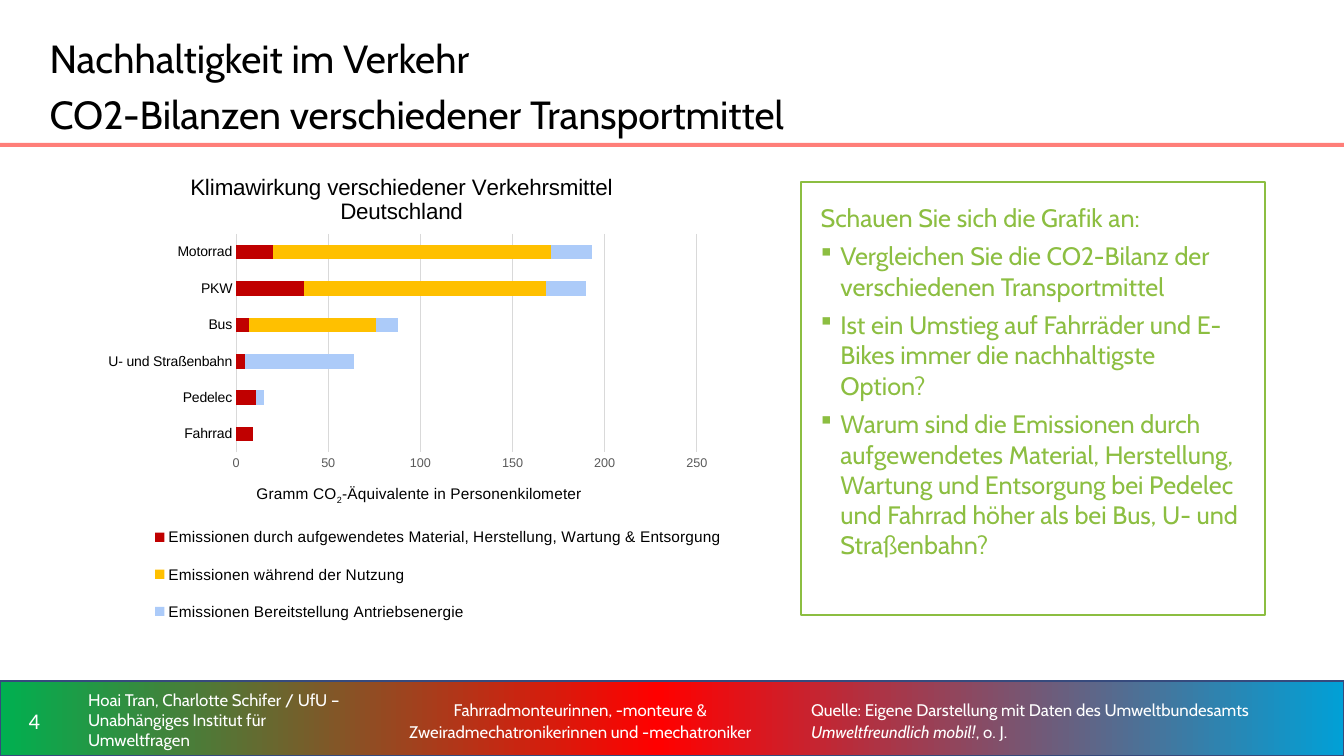
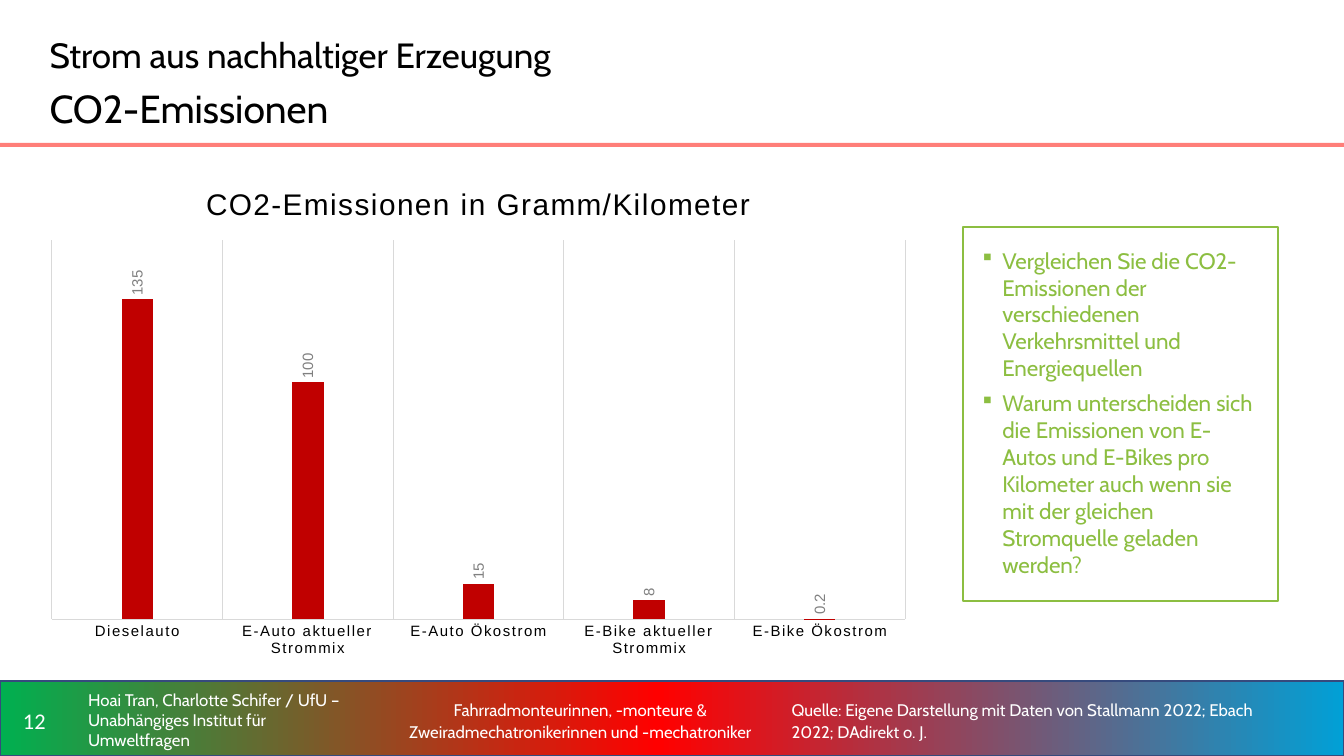
"""Build two slides on the CO2 balance of means of transport."""
from copy import deepcopy
from dataclasses import dataclass
from typing import NamedTuple

from lxml import etree
from pptx import Presentation
from pptx.chart.data import CategoryChartData
from pptx.dml.color import RGBColor
from pptx.enum.chart import XL_CHART_TYPE, XL_LABEL_POSITION, XL_LEGEND_POSITION, XL_TICK_MARK
from pptx.enum.shapes import MSO_SHAPE
from pptx.enum.text import MSO_ANCHOR, PP_ALIGN
from pptx.oxml.ns import qn
from pptx.util import Cm, Pt

STACKED = XL_CHART_TYPE.BAR_STACKED
COLUMNS = XL_CHART_TYPE.COLUMN_CLUSTERED
OUTSIDE = XL_LABEL_POSITION.OUTSIDE_END
BOTTOM = XL_LEGEND_POSITION.BOTTOM
NO_TICK = XL_TICK_MARK.NONE
RECT = MSO_SHAPE.RECTANGLE
TOP, MIDDLE = MSO_ANCHOR.TOP, MSO_ANCHOR.MIDDLE
LEFT, CENTER = PP_ALIGN.LEFT, PP_ALIGN.CENTER


@dataclass(frozen=True)
class Theme:
    black: str = "000000"
    white: str = "FFFFFF"
    green: str = "8CBE41"
    rule: str = "FF7E79"
    outline: str = "364A7D"
    grid: str = "D9D9D9"
    ticks: str = "595959"
    labels: str = "808080"
    red: str = "C00000"
    yellow: str = "FFC000"
    blue: str = "ACCBF9"
    band: tuple = ((0, "00B050"), (0.49, "FF0000"), (1, "01A0D6"))
    font: str = "Cabin"
    number_font: str = "Calibri"
    chart_font: str = "Arial"
    bullet_font: str = "Wingdings"
    title: float = 28
    page: float = 16
    footer: float = 12
    column_label: float = 10.64


T = Theme()


class Box(NamedTuple):
    x: float
    y: float
    w: float
    h: float

    def cm(self) -> tuple:
        return tuple(Cm(v) for v in self)


class Run(NamedTuple):
    text: str
    size: float = T.footer
    italic: bool = False


class Series(NamedTuple):
    name: str
    values: tuple
    color: str


@dataclass(frozen=True)
class Bars:
    kind: int
    box: Box
    title: str
    title_size: float
    cats: tuple
    series: tuple
    gap: int
    overlap: int
    top: float
    step: float
    plot: tuple
    cat_size: float


@dataclass(frozen=True)
class Page:
    number: int
    title: tuple
    source: tuple
    source_x: float
    task_box: Box
    task_size: float
    intro: str
    tasks: tuple
    bars: Bars


def rgb(color: str) -> RGBColor:
    return RGBColor.from_string(color)


def style(font, *, size: float, color: str, name: str = T.chart_font,
          bold: bool = False, italic: bool = False) -> None:
    font.size, font.name = Pt(size), name
    font.bold, font.italic = bold, italic
    font.color.rgb = rgb(color)


def put(p, text: str, **fmt):
    r = p.add_run()
    r.text = text
    style(r.font, **fmt)
    return r


def text_box(s, box: Box, runs: tuple, *, color: str = T.white, name: str = T.font,
             align=LEFT, anchor=MIDDLE, spacing: float = 1.0, broken: bool = False) -> None:
    tf = s.shapes.add_textbox(*box.cm()).text_frame
    tf.word_wrap, tf.vertical_anchor = True, anchor
    p = tf.paragraphs[0]
    p.alignment, p.line_spacing = align, spacing
    for i, run in enumerate(runs):
        if broken and i:
            p.add_line_break()
        put(p, run.text, size=run.size, italic=run.italic, color=color, name=name)


def rect(s, box: Box, fill: str):
    sp = s.shapes.add_shape(RECT, *box.cm())
    sp.shadow.inherit = False
    sp.fill.solid()
    sp.fill.fore_color.rgb = rgb(fill)
    sp.line.fill.background()
    return sp


def outline(sp, color: str, width: float) -> None:
    sp.line.color.rgb = rgb(color)
    sp.line.width = Pt(width)


def frame(s, page: Page) -> None:
    band = rect(s, Box(0, 17.16, 33.87, 1.89), T.white)
    band.fill.gradient()
    band.fill.gradient_angle = 0
    stops = band.element.xpath(".//a:gsLst")[0]
    stops.append(deepcopy(stops[-1]))
    for stop, (position, color) in zip(band.fill.gradient_stops, T.band):
        stop.position, stop.color.rgb = position, rgb(color)
    outline(band, T.outline, 1)
    rect(s, Box(0, 3.6, 33.87, 0.1), T.rule)
    text_box(s, Box(1, 0.5, 25.37, 3), page.title, color=T.black,
             anchor=TOP, spacing=1.2, broken=True)
    y, h = 17.37, 1.55
    text_box(s, Box(0, y, 1.73, h), (Run(str(page.number), T.page),),
             name=T.number_font, align=CENTER)
    text_box(s, Box(1.97, y, 7.06, h), (Run(
        "Hoai Tran, Charlotte Schifer / UfU – Unabhängiges Institut für Umweltfragen"),))
    text_box(s, Box(9.31, y, 10.64, h), (Run(
        "Fahrradmonteurinnen, -monteure & Zweiradmechatronikerinnen und -mechatroniker"),),
        align=CENTER, spacing=1.1)
    text_box(s, Box(page.source_x, y, 12.83, h), page.source, spacing=1.1)


def bullet(p) -> None:
    pPr = p._p.get_or_add_pPr()
    pPr.set("marL", str(Cm(0.5)))
    pPr.set("indent", str(-Cm(0.5)))
    color = etree.SubElement(pPr, qn("a:buClr"))
    etree.SubElement(color, qn("a:srgbClr"), val=T.green)
    etree.SubElement(pPr, qn("a:buFont"), typeface=T.bullet_font, charset="2")
    etree.SubElement(pPr, qn("a:buChar"), char="§")


def task_card(s, page: Page) -> None:
    sp = rect(s, page.task_box, T.white)
    outline(sp, T.green, 1.5)
    tf = sp.text_frame
    tf.word_wrap, tf.vertical_anchor = True, TOP
    tf.margin_left = tf.margin_right = tf.margin_top = tf.margin_bottom = Cm(0.5)
    lines = ((page.intro,) if page.intro else ()) + page.tasks
    for i, line in enumerate(lines):
        p = tf.add_paragraph() if i else tf.paragraphs[0]
        if line != page.intro:
            bullet(p)
        p.alignment = LEFT
        if i:
            p.space_before = Pt(6)
        put(p, line, size=page.task_size, color=T.green, name=T.font)


def place(el, inner: bool = False, **at: float) -> None:
    for old in el.findall(qn("c:layout")):
        el.remove(old)
    overlay = el.find(qn("c:overlay"))
    layout = etree.Element(qn("c:layout"))
    el.insert(0 if overlay is None else el.index(overlay), layout)
    manual = etree.SubElement(layout, qn("c:manualLayout"))
    if inner:
        etree.SubElement(manual, qn("c:layoutTarget"), val="inner")
    for key in ("x", "y"):
        etree.SubElement(manual, qn(f"c:{key}Mode"), val="edge")
    for key, value in at.items():
        etree.SubElement(manual, qn(f"c:{key}"), val=str(value))


def grid_line(line) -> None:
    line.color.rgb = rgb(T.grid)
    line.width = Pt(0.75)


def add_bars(s, bars: Bars):
    data = CategoryChartData()
    data.categories = bars.cats
    for series in bars.series:
        data.add_series(series.name, series.values)
    chart = s.shapes.add_chart(bars.kind, *bars.box.cm(), data).chart
    style(chart.font, size=10, color=T.black)
    chart.has_legend, chart.has_title = False, True
    tf = chart.chart_title.text_frame
    for i, line in enumerate(bars.title.split("\n")):
        p = tf.add_paragraph() if i else tf.paragraphs[0]
        put(p, line, size=bars.title_size, color=T.black)
    plot = chart.plots[0]
    plot.gap_width, plot.overlap, plot.vary_by_categories = bars.gap, bars.overlap, False
    for drawn, series in zip(plot.series, bars.series):
        drawn.format.fill.solid()
        drawn.format.fill.fore_color.rgb = rgb(series.color)
    cat, val = chart.category_axis, chart.value_axis
    cat.major_tick_mark = val.major_tick_mark = NO_TICK
    style(cat.tick_labels.font, size=bars.cat_size, color=T.black)
    grid_line(cat.format.line)
    val.minimum_scale, val.maximum_scale, val.major_unit = 0, bars.top, bars.step
    place(chart.element.xpath(".//c:plotArea")[0], True, **dict(zip("xywh", bars.plot)))
    return chart


def finish_stacked(chart) -> None:
    val = chart.value_axis
    style(val.tick_labels.font, size=9, color=T.ticks)
    val.format.line.fill.background()
    grid_line(val.major_gridlines.format.line)
    p = val.axis_title.text_frame.paragraphs[0]
    for text in ("Gramm CO", "2", "-Äquivalente in Personenkilometer"):
        r = put(p, text, size=11, color=T.black)
        if text == "2":
            r.font._element.set("baseline", "-25000")
    title = chart.element.xpath(".//c:valAx/c:title")[0]
    title.xpath(".//a:bodyPr")[0].set("rot", "0")
    place(title, x=0.28, y=0.67)
    place(chart.element.xpath("c:chart/c:title")[0], x=0.18, y=0.03)
    chart.has_legend = True
    chart.legend.position, chart.legend.include_in_layout = BOTTOM, False
    style(chart.legend.font, size=11, color=T.black)
    place(chart.element.xpath(".//c:legend")[0], x=0.12, y=0.73, w=0.88, h=0.27)


def finish_columns(chart) -> None:
    cat, val, plot = chart.category_axis, chart.value_axis, chart.plots[0]
    cat.has_major_gridlines, val.has_major_gridlines = True, False
    grid_line(cat.major_gridlines.format.line)
    val.visible = False
    plot.has_data_labels = True
    labels = plot.data_labels
    labels.show_value, labels.position = True, OUTSIDE
    style(labels.font, size=T.column_label, color=T.labels)
    body = chart.element.xpath(".//c:dLbls/c:txPr/a:bodyPr")[0]
    body.set("rot", "-5400000")
    body.set("vert", "horz")
    for rPr in chart.element.xpath(".//c:catAx//a:defRPr | c:chart/c:title//a:rPr"):
        rPr.set("spc", "120")


TRANSPORT = Bars(
    STACKED, Box(1.72, 3.93, 16.66, 12.19),
    "Klimawirkung verschiedener Verkehrsmittel\nDeutschland", 16,
    ("Fahrrad", "Pedelec", "U- und Straßenbahn", "Bus", "PKW", "Motorrad"),
    (Series("Emissionen durch aufgewendetes Material, Herstellung, Wartung & Entsorgung",
            (9, 11, 5, 7, 37, 20), T.red),
     Series("Emissionen während der Nutzung", (0, 0, 0, 69, 131, 151), T.yellow),
     Series("Emissionen Bereitstellung Antriebsenergie", (0, 4, 59, 12, 22, 22), T.blue)),
    150, 100, 250, 50, (0.254, 0.161, 0.697, 0.452), 10)
POWER = Bars(
    COLUMNS, Box(0.86, 4.15, 22.4, 12.67), "CO2-Emissionen in Gramm/Kilometer", 21.28,
    ("Dieselauto", "E-Auto aktueller Strommix", "E-Auto Ökostrom",
     "E-Bike aktueller Strommix", "E-Bike Ökostrom"),
    (Series("Series 1", (135, 100, 15, 8, 0.2), T.red),),
    444, -90, 160, 20, (0.02, 0.15, 0.96, 0.754), T.column_label)
PAGES = (
    Page(4, (Run("Nachhaltigkeit im Verkehr", T.title),
             Run("CO2-Bilanzen verschiedener Transportmittel", T.title)),
         (Run("Quelle: Eigene Darstellung mit Daten des Umweltbundesamts "),
          Run("Umweltfreundlich mobil!", italic=True), Run(", o. J.")),
         20.19, Box(20.18, 4.59, 11.71, 10.9), 18, "Schauen Sie sich die Grafik an:",
         ("Vergleichen Sie die CO2-Bilanz der verschiedenen Transportmittel",
          "Ist ein Umstieg auf Fahrräder und E-Bikes immer die nachhaltigste Option?",
          "Warum sind die Emissionen durch aufgewendetes Material, Herstellung, Wartung und "
          "Entsorgung bei Pedelec und Fahrrad höher als bei Bus, U- und Straßenbahn?"),
         TRANSPORT),
    Page(12, (Run("Strom aus nachhaltiger Erzeugung", 25), Run("CO2-Emissionen", 27.9)),
         (Run("Quelle: Eigene Darstellung mit Daten von Stallmann 2022; Ebach 2022; "
              "DAdirekt o. J."),),
         19.7, Box(24.26, 5.72, 7.95, 9.42), 16, "",
         ("Vergleichen Sie die CO2-Emissionen der verschiedenen Verkehrsmittel und "
          "Energiequellen",
          "Warum unterscheiden sich die Emissionen von E-Autos und E-Bikes pro Kilometer "
          "auch wenn sie mit der gleichen Stromquelle geladen werden?"),
         POWER),
)


def main() -> None:
    prs = Presentation()
    prs.slide_width, prs.slide_height = Cm(33.87), Cm(19.05)
    for page in PAGES:
        s = prs.slides.add_slide(prs.slide_layouts[6])
        frame(s, page)
        task_card(s, page)
        chart = add_bars(s, page.bars)
        finish = finish_stacked if page.bars.kind == STACKED else finish_columns
        finish(chart)
    prs.save("out.pptx")


if __name__ == "__main__":
    main()
